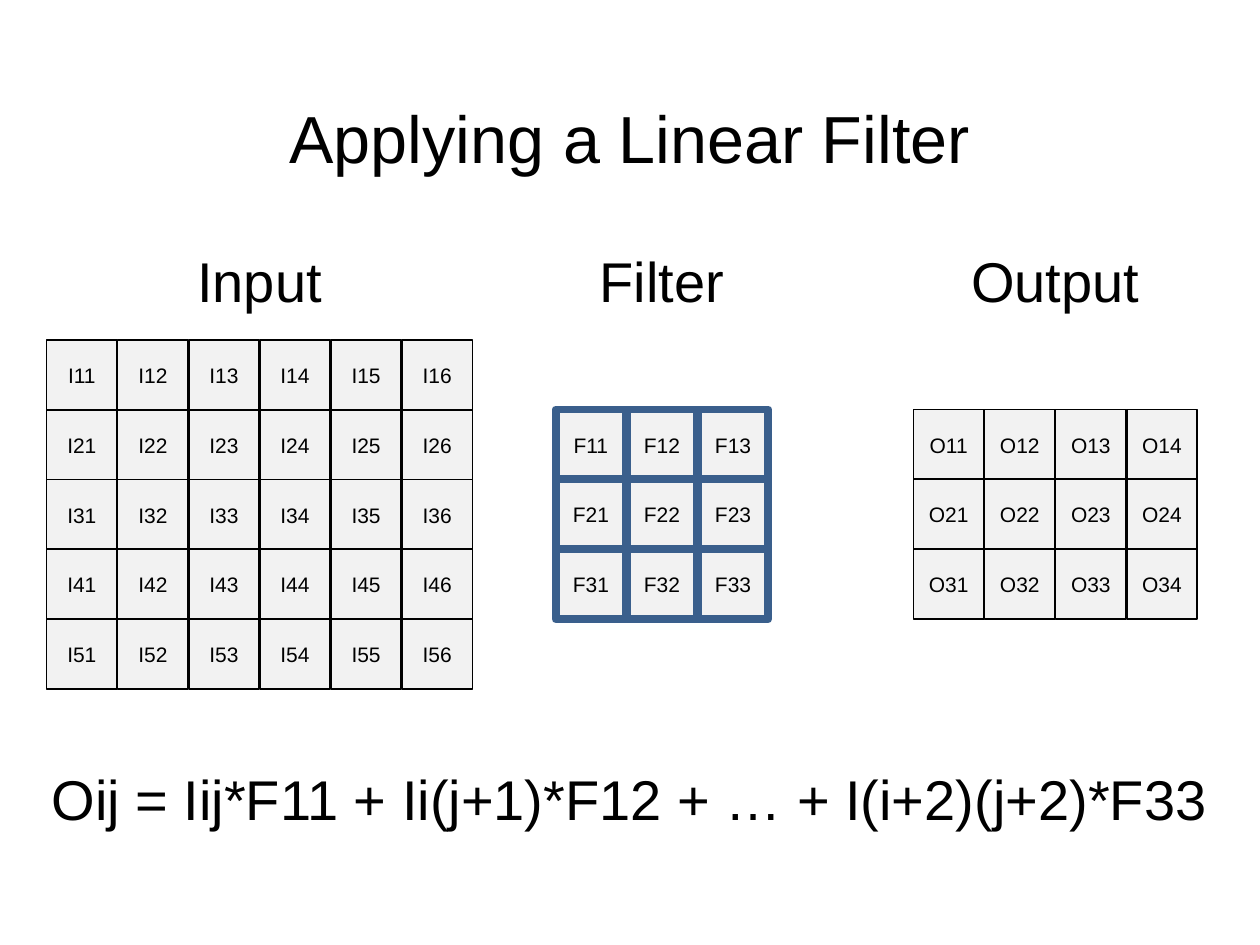
import pptx
import pptx.dml.color
import pptx.enum.shapes
import pptx.enum.text
import pptx.util
from pptx.util import Inches

CELL = 0.56
COLUMN_STEP = 0.564
ROW_STEP = 0.553


def color(value):
    return pptx.dml.color.RGBColor.from_string(value)


class FilterSlide:
    font = "Arial"
    ink = "000000"
    cell_fill = "F2F2F2"

    def __init__(self, deck):
        self.slide = deck.slides.add_slide(deck.slide_layouts[5])

    def add_text(self, frame, text, size):
        para = frame.paragraphs[0]
        para.alignment = pptx.enum.text.PP_ALIGN.CENTER
        span = para.add_run()
        span.text = text
        span.font.name = self.font
        span.font.size = pptx.util.Pt(size)
        span.font.color.rgb = color(self.ink)
        return para

    def title(self, text, left, top, width, height):
        box = self.slide.shapes.title
        box.left, box.top = Inches(left), Inches(top)
        box.width, box.height = Inches(width), Inches(height)
        box.text_frame.vertical_anchor = pptx.enum.text.MSO_ANCHOR.MIDDLE
        self.add_text(box.text_frame, text, 38).line_spacing = 0.9

    def label(self, shapes, text, left, top, width, height):
        box = shapes.add_textbox(Inches(left), Inches(top), Inches(width), Inches(height))
        box.text_frame.word_wrap = True
        self.add_text(box.text_frame, text, 32)

    def cell(self, shapes, text, left, top, line, weight):
        box = shapes.add_shape(
            pptx.enum.shapes.MSO_SHAPE.RECTANGLE,
            Inches(left), Inches(top), Inches(CELL), Inches(CELL),
        )
        box.shadow.inherit = False
        box.fill.solid()
        box.fill.fore_color.rgb = color(self.cell_fill)
        box.line.color.rgb = color(line)
        box.line.width = pptx.util.Pt(weight)
        frame = box.text_frame
        frame.margin_left = frame.margin_right = 0
        frame.vertical_anchor = pptx.enum.text.MSO_ANCHOR.MIDDLE
        self.add_text(frame, text, 12)

    def matrix(self, shapes, letter, rows, columns, left, top, line=ink, weight=1):
        for row in range(rows):
            for column in range(columns):
                self.cell(
                    shapes, f"{letter}{row + 1}{column + 1}",
                    left + column * COLUMN_STEP, top + row * ROW_STEP, line, weight,
                )


def main():
    deck = pptx.Presentation()
    deck.slide_width, deck.slide_height = Inches(10), Inches(7.5)
    page = FilterSlide(deck)
    shapes = page.slide.shapes

    page.title("Applying a Linear Filter", 0.69, 0.4, 8.62, 1.45)
    page.matrix(shapes, "I", 5, 6, 0.37, 2.7)
    page.label(shapes, "Input", 0.37, 1.91, 3.38, 0.64)
    page.label(shapes, "Output", 7.51, 1.91, 1.73, 0.64)
    page.label(
        shapes, "Oij = Iij*F11 + Ii(j+1)*F12 + … + I(i+2)(j+2)*F33",
        0.1, 6.02, 9.8, 1.18,
    )
    page.matrix(shapes, "O", 3, 4, 7.25, 3.25)

    filter_group = shapes.add_group_shape()
    page.matrix(filter_group.shapes, "F", 3, 3, 4.41, 3.25, "3A5F8C", 4.5)
    page.label(filter_group.shapes, "Filter", 4.39, 1.91, 1.73, 0.64)

    deck.save("out.pptx")


if __name__ == "__main__":
    main()
